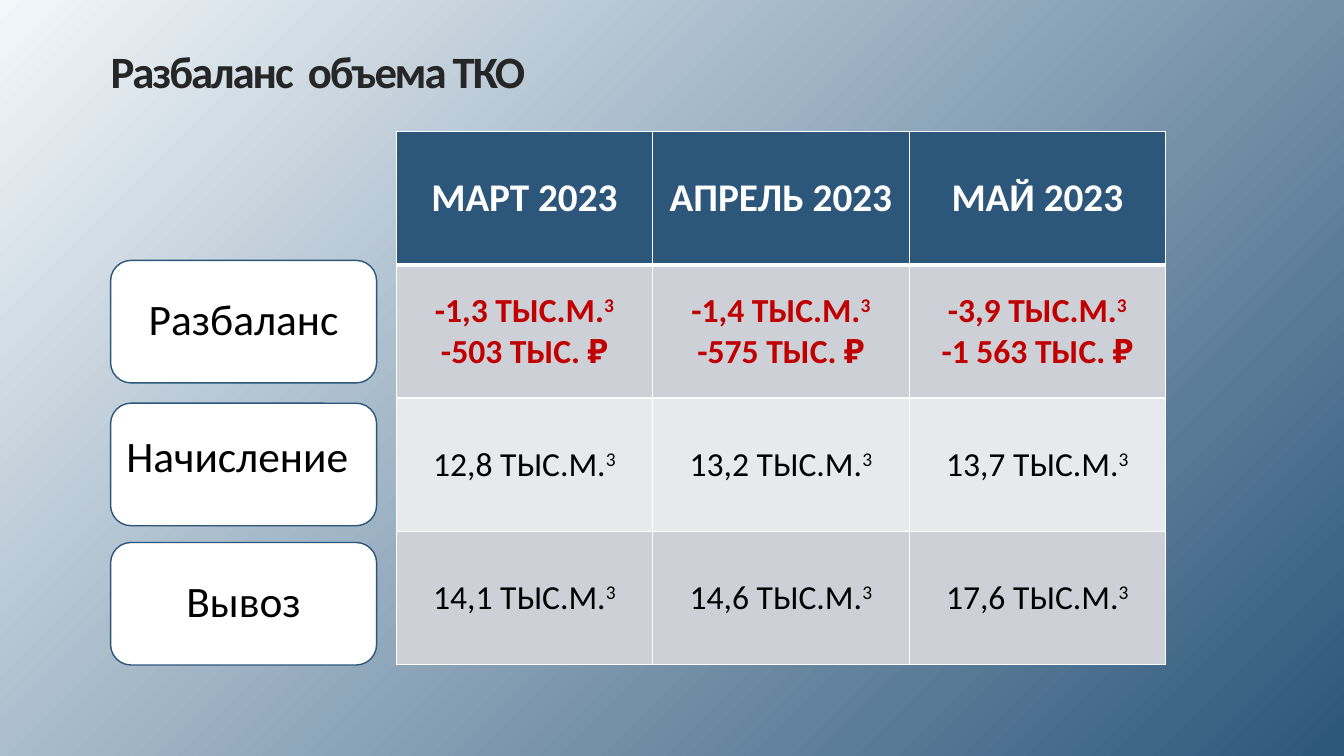
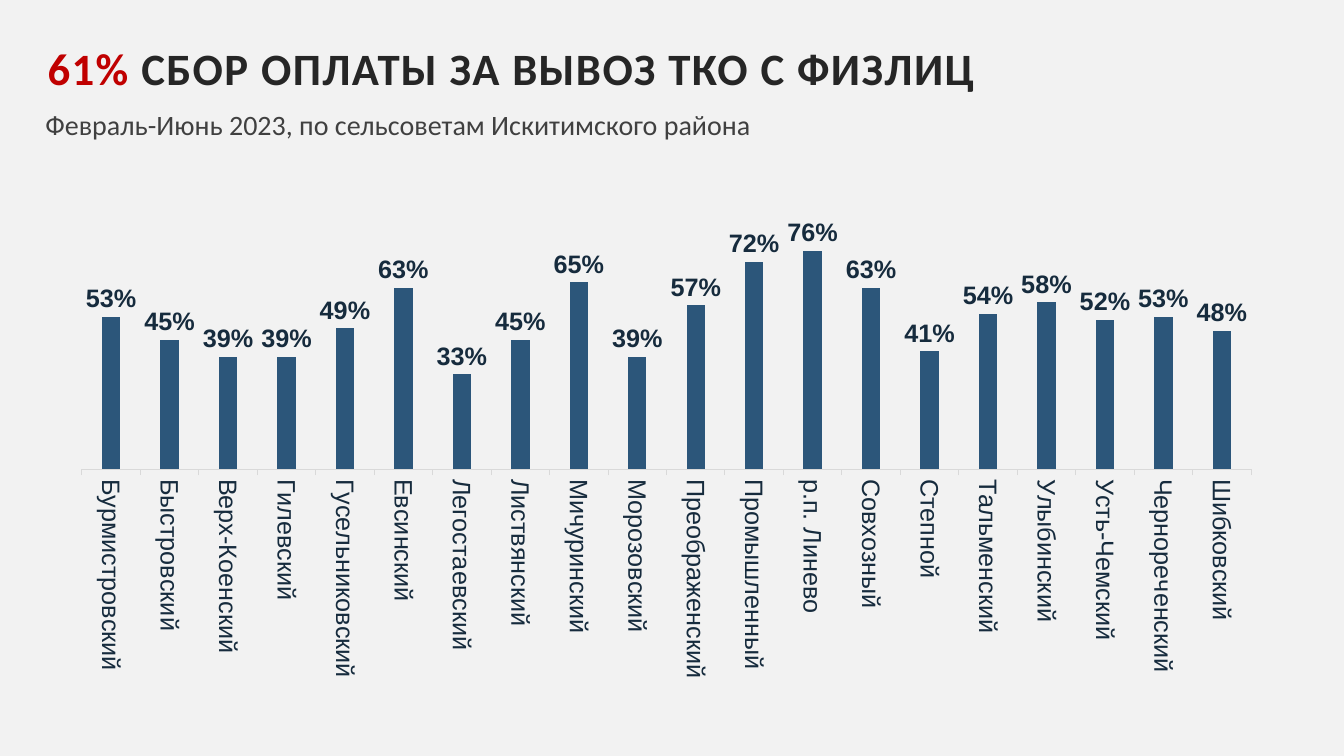
from pptx import Presentation
from pptx.chart.data import CategoryChartData
from pptx.dml.color import RGBColor
from pptx.enum.chart import XL_CHART_TYPE, XL_LABEL_POSITION, XL_TICK_MARK
from pptx.enum.shapes import MSO_SHAPE
from pptx.enum.text import MSO_ANCHOR, PP_ALIGN
from pptx.oxml import parse_xml
from pptx.oxml.ns import nsdecls, qn
from pptx.util import Pt

NAVY = RGBColor(0x2C, 0x56, 0x7A)
DEEP = RGBColor(0x16, 0x2B, 0x3D)
PALE = RGBColor(0xF2, 0xF7, 0xFA)
PAPER = RGBColor(0xF2, 0xF2, 0xF2)
INK = RGBColor(0x26, 0x26, 0x26)
GREY = RGBColor(0x40, 0x40, 0x40)
RULE = RGBColor(0xD9, 0xD9, 0xD9)
RED = RGBColor(0xC0, 0x00, 0x00)
WHITE = RGBColor(0xFF, 0xFF, 0xFF)
BLACK = RGBColor(0x00, 0x00, 0x00)
BANDS = (RGBColor(0xCD, 0xD1, 0xD7), RGBColor(0xE8, 0xE9, 0xEC))
FONT = "Calibri"
CHART_FONT = "Arial"

MONTHS = ("МАРТ 2023", "АПРЕЛЬ 2023", "МАЙ 2023")
VOLUMES = (
    ("-1,3", "-1,4", "-3,9"),
    ("12,8", "13,2", "13,7"),
    ("14,1", "14,6", "17,6"),
)
LOSSES = ("-503", "-575", "-1 563")
PAYMENTS = {
    "Бурмистровский": 0.53, "Быстровский": 0.45, "Верх-Коенский": 0.39,
    "Гилевский": 0.39, "Гусельниковский": 0.49, "Евсинский": 0.63,
    "Легостаевский": 0.33, "Листвянский": 0.45, "Мичуринский": 0.65,
    "Морозовский": 0.39, "Преображенский": 0.57, "Промышленный": 0.72,
    "р.п. Линево": 0.76, "Совхозный": 0.63, "Степной": 0.41,
    "Тальменский": 0.54, "Улыбинский": 0.58, "Усть-Чемский": 0.52,
    "Чернореченский": 0.53, "Шибковский": 0.48,
}


def set_font(font, size, color, bold=False, name=FONT):
    font.name = name
    font.size = Pt(size)
    font.bold = bold
    font.color.rgb = color


class Deck:
    def __init__(self):
        self.prs = Presentation()
        self.prs.slide_width = Pt(960)
        self.prs.slide_height = Pt(540)
        self.s = None

    def slide(self):
        self.s = self.prs.slides.add_slide(self.prs.slide_layouts[6])
        return self.s.background.fill

    def text(self, x, y, w, h, anchor=MSO_ANCHOR.TOP):
        tf = self.s.shapes.add_textbox(Pt(x), Pt(y), Pt(w), Pt(h)).text_frame
        tf.word_wrap = True
        tf.vertical_anchor = anchor
        tf.margin_left = tf.margin_top = tf.margin_right = tf.margin_bottom = 0
        p = tf.paragraphs[0]
        p.line_spacing = 0.9
        return p

    def title(self, x, y, w, h, parts, spacing):
        p = self.text(x, y, w, h, MSO_ANCHOR.MIDDLE)
        for text, color in parts:
            r = p.add_run()
            r.text = text
            set_font(r.font, 32, color, True)
            r._r.get_or_add_rPr().set("spc", str(spacing))

    def subtitle(self, x, y, w, h, text):
        p = self.text(x, y, w, h)
        p.text = text
        set_font(p.font, 20, GREY)

    def card(self, x, y, w, h, text, shift=0):
        sp = self.s.shapes.add_shape(
            MSO_SHAPE.ROUNDED_RECTANGLE, Pt(x), Pt(y), Pt(w), Pt(h))
        sp.shadow.inherit = False
        sp.fill.solid()
        sp.fill.fore_color.rgb = WHITE
        sp.line.color.rgb = NAVY
        sp.line.width = Pt(1)
        tf = sp.text_frame
        tf.word_wrap = True
        tf.vertical_anchor = MSO_ANCHOR.MIDDLE
        tf.margin_left = tf.margin_top = 0
        tf.margin_right = tf.margin_bottom = Pt(shift)
        p = tf.paragraphs[0]
        p.text = text
        p.alignment = PP_ALIGN.CENTER
        p.line_spacing = 0.9
        set_font(p.font, 31, BLACK)

    def table(self, x, y, col_w, row_h, rows, cols):
        table = self.s.shapes.add_table(
            rows, cols, Pt(x), Pt(y), Pt(col_w * cols), Pt(row_h * rows)).table
        for col in table.columns:
            col.width = Pt(col_w)
        for row in table.rows:
            row.height = Pt(row_h)
        return table

    def cell(self, cell, lines, fill, size, color, bold):
        cell.fill.solid()
        cell.fill.fore_color.rgb = fill
        cell.vertical_anchor = MSO_ANCHOR.MIDDLE
        tf = cell.text_frame
        for i, (text, power) in enumerate(lines):
            p = tf.add_paragraph() if i else tf.paragraphs[0]
            p.alignment = PP_ALIGN.CENTER
            set_font(p.font, size, color, bold)
            for part in filter(None, (text, power)):
                r = p.add_run()
                r.text = part
                set_font(r.font, size, color, bold)
            if power:
                r._r.get_or_add_rPr().set("baseline", "30000")

    def underline_cell(self, cell, width):
        cell._tc.get_or_add_tcPr().insert(0, parse_xml(
            f'<a:lnB {nsdecls("a")} w="{Pt(width)}"><a:solidFill>'
            f'<a:srgbClr val="{WHITE}"/></a:solidFill></a:lnB>'))

    def column_chart(self, x, y, w, h, values, plot_box):
        data = CategoryChartData(number_format="0%")
        data.categories = list(values)
        data.add_series("Series 1", list(values.values()))
        chart = self.s.shapes.add_chart(
            XL_CHART_TYPE.COLUMN_CLUSTERED, Pt(x), Pt(y), Pt(w), Pt(h), data).chart
        chart.has_title = False
        chart.has_legend = False
        set_font(chart.font, 10, BLACK)

        plot = chart.plots[0]
        plot.gap_width = 219
        plot.overlap = -27
        plot.vary_by_categories = False
        fill = plot.series[0].format.fill
        fill.solid()
        fill.fore_color.rgb = NAVY
        plot.has_data_labels = True
        labels = plot.data_labels
        labels.show_value = True
        labels.position = XL_LABEL_POSITION.OUTSIDE_END
        labels.number_format = "0%"
        labels.number_format_is_linked = False
        set_font(labels.font, 18, DEEP, True, CHART_FONT)

        axis = chart.category_axis
        axis.major_tick_mark = XL_TICK_MARK.OUTSIDE
        axis.format.line.color.rgb = RULE
        axis.format.line.width = Pt(0.75)
        set_font(axis.tick_labels.font, 18, DEEP, False, CHART_FONT)
        body = axis._element.find(qn("c:txPr")).find(qn("a:bodyPr"))
        body.set("rot", "5400000")
        body.set("vert", "horz")

        axis = chart.value_axis
        axis.minimum_scale = 0
        axis.maximum_scale = 1
        axis.major_unit = 0.2
        axis.has_major_gridlines = False
        axis.visible = False
        self.place_plot(chart, plot_box)

    def place_plot(self, chart, plot_box):
        area = chart._chartSpace.chart.plotArea
        for old in area.findall(qn("c:layout")):
            area.remove(old)
        sizes = "".join(
            f'<c:{tag} val="{val}"/>' for tag, val in zip("xywh", plot_box))
        area.insert(0, parse_xml(
            f'<c:layout {nsdecls("c")}><c:manualLayout>'
            '<c:layoutTarget val="inner"/><c:xMode val="edge"/><c:yMode val="edge"/>'
            f'{sizes}</c:manualLayout></c:layout>'))


def balance_slide(deck):
    fill = deck.slide()
    fill.gradient()
    fill.gradient_angle = 315
    for stop, color in zip(fill.gradient_stops, (PALE, NAVY)):
        stop.color.rgb = color
    deck.title(79, 34, 754, 38, [("Разбаланс  объема ТКО", INK)], -150)

    table = deck.table(283, 93.8, 183.2, 95.3, 4, 3)
    for col, month in enumerate(MONTHS):
        header = table.cell(0, col)
        deck.cell(header, [(month, "")], NAVY, 28, WHITE, True)
        deck.underline_cell(header, 3)
    for row, volumes in enumerate(VOLUMES):
        for col, volume in enumerate(volumes):
            lines = [(f"{volume} ТЫС.М.", "3")]
            if row == 0:
                lines.append((f"{LOSSES[col]} ТЫС. ₽", ""))
            color = BLACK if row else RED
            deck.cell(table.cell(row + 1, col), lines, BANDS[row % 2],
                      24, color, row == 0)

    for text, y, shift in (("Разбаланс", 186, 0), ("Начисление", 288, 9),
                           ("Вывоз", 387.5, 0)):
        deck.card(79, y, 190, 87.5, text, shift)


def payment_slide(deck):
    fill = deck.slide()
    fill.solid()
    fill.fore_color.rgb = PAPER
    deck.title(34, 34, 892, 34,
               [("61%", RED), (" СБОР ОПЛАТЫ ЗА ВЫВОЗ ТКО С ФИЗЛИЦ", INK)], 100)
    deck.subtitle(32.4, 79.5, 798, 20,
                  "Февраль-Июнь 2023, по сельсоветам Искитимского района")
    deck.column_chart(32.4, 110, 870, 395, PAYMENTS, (0.03, 0.05, 0.96, 0.52))


def main():
    deck = Deck()
    balance_slide(deck)
    payment_slide(deck)
    deck.prs.save("out.pptx")


if __name__ == "__main__":
    main()
